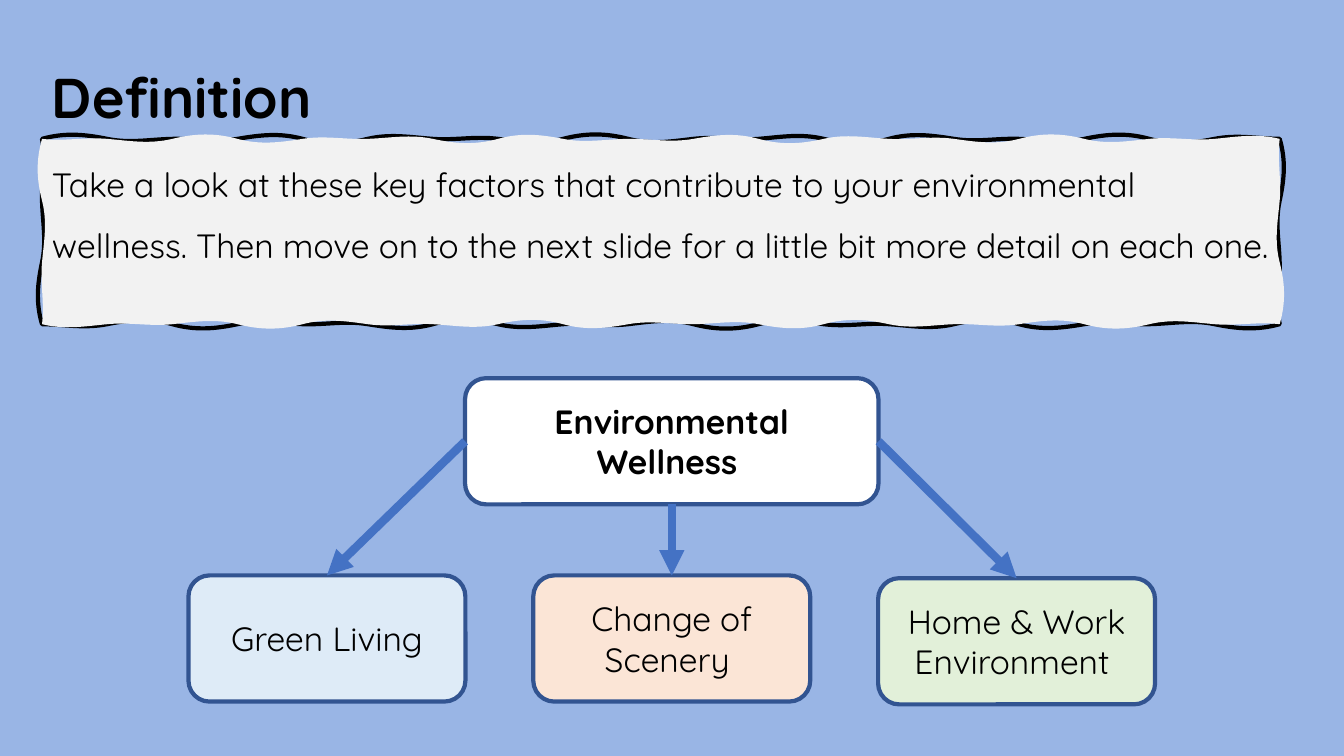
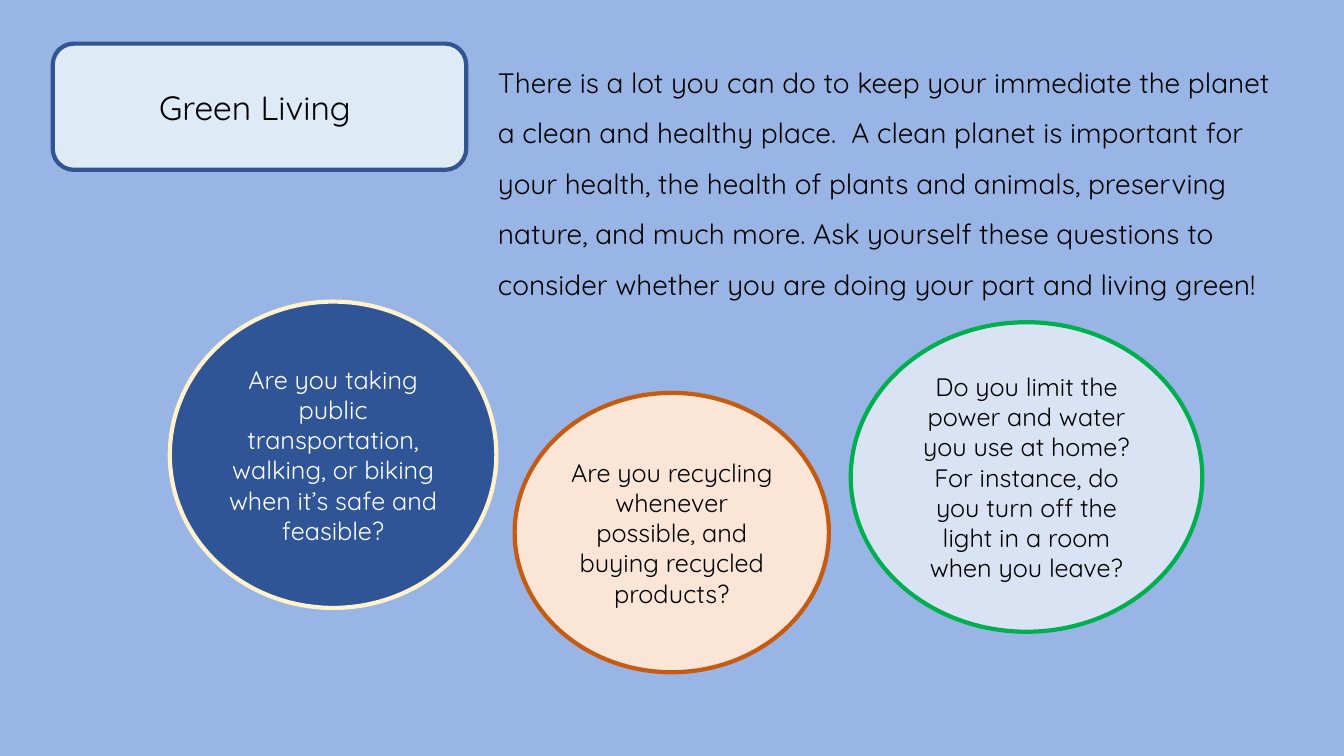
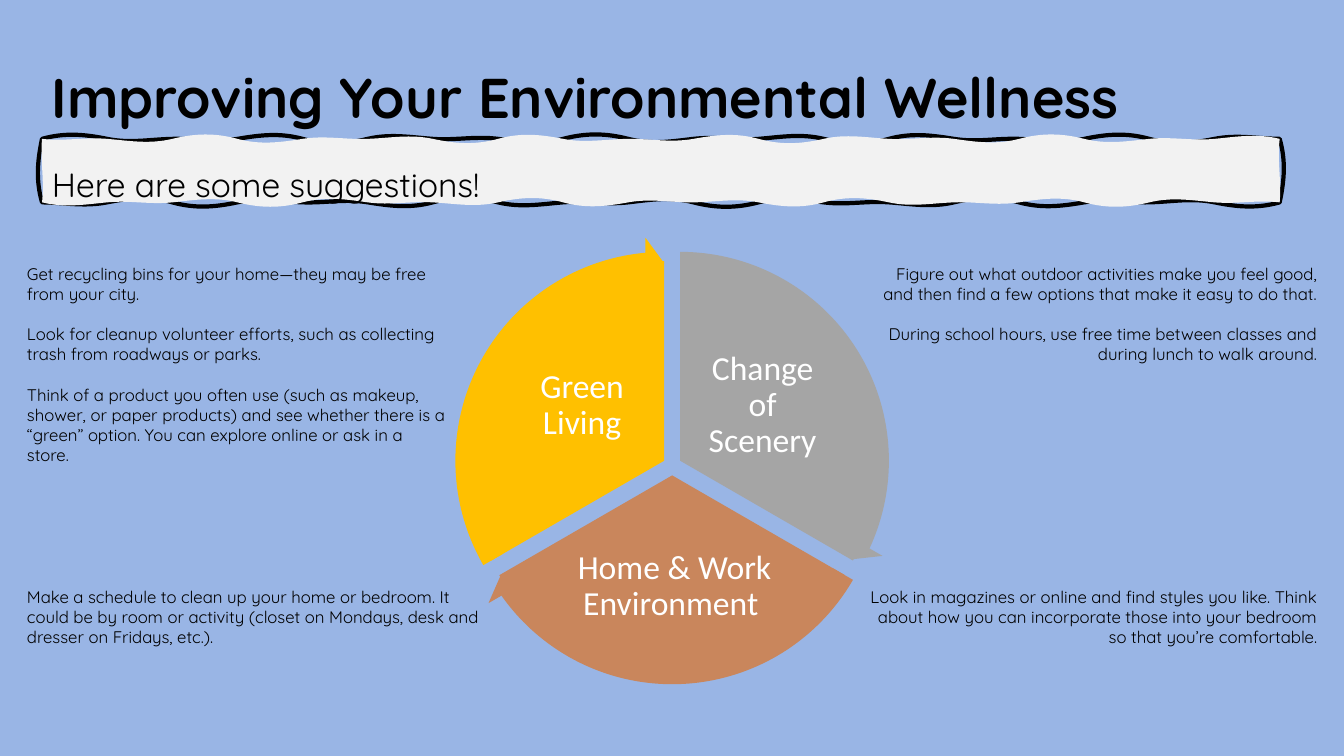
from collections import namedtuple
from dataclasses import dataclass
from math import cos

from lxml import etree
from pptx import Presentation
from pptx.dml.color import RGBColor
from pptx.enum.shapes import MSO_CONNECTOR, MSO_SHAPE
from pptx.enum.text import MSO_ANCHOR, PP_ALIGN
from pptx.oxml.ns import qn
from pptx.util import Cm, Pt

ROUNDED = MSO_SHAPE.ROUNDED_RECTANGLE
ELLIPSE = MSO_SHAPE.OVAL
PIE = MSO_SHAPE.PIE
CIRCULAR_ARROW = MSO_SHAPE.CIRCULAR_ARROW
STRAIGHT = MSO_CONNECTOR.STRAIGHT
LEFT, CENTER, RIGHT = PP_ALIGN.LEFT, PP_ALIGN.CENTER, PP_ALIGN.RIGHT
TOP, MIDDLE = MSO_ANCHOR.TOP, MSO_ANCHOR.MIDDLE
SITE_TOP, SITE_LEFT, SITE_BOTTOM, SITE_RIGHT = range(4)

Box = namedtuple("Box", "left top width height")
Insets = namedtuple("Insets", "left top right bottom")


@dataclass(frozen=True)
class Theme:
    """Colours, fonts and sizes shared by the slides."""

    font: str = "Quicksand"
    wheel_font: str = "Calibri"
    background: str = "99B5E5"
    text: str = "000000"
    white: str = "FFFFFF"
    paper: str = "F2F2F2"
    card_line: str = "325491"
    arrow: str = "4472C4"
    pale_blue: str = "DEEBF7"
    peach: str = "FBE5D6"
    pale_green: str = "E2F0D9"
    lavender: str = "DAE3F3"
    navy: str = "2F5597"
    cream: str = "FFF2CC"
    orange: str = "C55A11"
    green: str = "00B050"
    gold: str = "FFC000"
    grey: str = "A5A5A5"
    clay: str = "C9865C"
    title_size: float = 40
    lead_size: float = 24
    body_size: float = 20
    bubble_size: float = 18
    note_size: float = 12
    note_gap: float = 14.4
    outline: float = 3
    arrow_width: float = 6


THEME = Theme()
PLAIN_INSETS = Insets(0.25, 0.13, 0.25, 0.13)
CARD_INSETS = Insets(0.4, 0.13, 0.4, 0.13)
TIGHT_INSETS = Insets(0.08, 0.08, 0.08, 0.08)
CARD_WIDTH, CARD_HEIGHT = 10.42, 3.18
TITLE_BOX = Box(1.06, 1.45, 28.93, 1.96)


def lengths(box):
    """Turn a box in centimetres into lengths."""
    return [Cm(value) for value in box]


def write_text(shape, *texts, size, font=THEME.font, color=THEME.text, bold=False,
               align=LEFT, anchor=TOP, spacing=None, gap=0, insets=PLAIN_INSETS):
    """Write one paragraph for each text into a shape."""
    frame = shape.text_frame
    frame.word_wrap = True
    frame.vertical_anchor = anchor
    frame.margin_left, frame.margin_top, frame.margin_right, frame.margin_bottom = lengths(insets)
    for index, text in enumerate(texts):
        para = frame.add_paragraph() if index else frame.paragraphs[0]
        para.alignment = align
        para.space_before = Pt(gap if index else 0)
        if spacing:
            para.line_spacing = spacing
        span = para.add_run()
        span.text = text
        span.font.name = font
        span.font.size = Pt(size)
        span.font.bold = bold
        span.font.color.rgb = RGBColor.from_string(color)


def paint(shape, fill, line=None):
    """Give a shape its fill and outline, with no shadow."""
    shape.shadow.inherit = False
    shape.fill.solid()
    shape.fill.fore_color.rgb = RGBColor.from_string(fill)
    if line:
        shape.line.color.rgb = RGBColor.from_string(line)
        shape.line.width = Pt(THEME.outline)
    else:
        shape.line.fill.background()


def add_text(shapes, box, *texts, **style):
    """Add a text box."""
    write_text(shapes.add_textbox(*lengths(box)), *texts, **style)


def add_figure(shapes, kind, box, fill, line=None, adjustments=()):
    """Add a painted preset shape."""
    shape = shapes.add_shape(kind, *lengths(box))
    for index, value in enumerate(adjustments):
        shape.adjustments[index] = value
    paint(shape, fill, line)
    return shape


def add_card(page, box, text, fill, bold=False):
    """Add a rounded topic card."""
    card = add_figure(page.shapes, ROUNDED, box, fill, THEME.card_line)
    write_text(card, text, size=THEME.lead_size, bold=bold, align=CENTER,
               anchor=MIDDLE, insets=CARD_INSETS)
    return card


def add_bubble(page, box, text, fill, line, color=THEME.text):
    """Add an ellipse holding a question."""
    bubble = add_figure(page.shapes, ELLIPSE, box, fill, line)
    write_text(bubble, text, size=THEME.bubble_size, color=color, align=CENTER, anchor=MIDDLE)


def add_arrow(page, start, start_site, end, end_site):
    """Join two cards with an arrow."""
    arrow = page.shapes.add_connector(STRAIGHT, 0, 0, 0, 0)
    arrow.begin_connect(start, start_site)
    arrow.end_connect(end, end_site)
    arrow.line.color.rgb = RGBColor.from_string(THEME.arrow)
    arrow.line.width = Pt(THEME.arrow_width)
    etree.SubElement(arrow.line._get_or_add_ln(), qn("a:tailEnd"), type="triangle")
    etree.SubElement(arrow._element.spPr, qn("a:effectLst"))


def rough_curves(corners, phase):
    """List the Bezier curves that sway along the sides between corners."""
    curves = []
    for index, (x, y) in enumerate(corners):
        next_x, next_y = corners[(index + 1) % 4]
        length = abs(next_x - x) + abs(next_y - y)
        across, down = (next_x - x) / length, (next_y - y) / length
        count = max(1, round(length / 1.6))
        for step in range(count):
            curve = []
            for part, sway in ((0.35, -cos(phase + 2.4 * step)),
                               (0.65, cos(phase + 2.4 * (step + 1))), (1, 0)):
                along, shift = length * (step + part) / count, 0.16 * sway
                curve.append((x + across * along - down * shift,
                              y + down * along + across * shift))
            curves.append(curve)
    return curves


def roughen(band, corners):
    """Replace the straight path of a band by a swaying stroke and a swaying fill."""
    straight = next(band._element.iter(qn("a:path")))
    holder = straight.getparent()
    for phase, hidden in ((0, {"fill": "none"}), (2, {"stroke": "0"})):
        trace = etree.SubElement(holder, qn("a:path"), w=straight.get("w"),
                                 h=straight.get("h"), **hidden)
        steps = [("a:moveTo", corners[:1])]
        steps += [("a:cubicBezTo", curve) for curve in rough_curves(corners, phase)]
        steps.append(("a:close", []))
        for tag, points in steps:
            step = etree.SubElement(trace, qn(tag))
            for x, y in points:
                etree.SubElement(step, qn("a:pt"), x=str(Cm(x)), y=str(Cm(y)))
    holder.remove(straight)


def add_rough_band(page, height, text):
    """Add the torn paper band under the title with its text."""
    box = Box(1.06, 3.5, 31.19, height)
    corners = [(0, 0), (box.width, 0), (box.width, height), (0, height)]
    points = [(Cm(box.left + x), Cm(box.top + y)) for x, y in corners]
    builder = page.shapes.build_freeform(*points[0])
    builder.add_line_segments(points[1:], close=True)
    band = builder.convert_to_shape()
    roughen(band, corners)
    paint(band, THEME.paper, THEME.text)
    write_text(band, text, size=THEME.lead_size, spacing=1.5,
               insets=PLAIN_INSETS._replace(right=0.2))


def add_page(deck, title=None):
    """Add a blank slide with the shared background and title style."""
    page = deck.slides.add_slide(deck.slide_layouts[6])
    page.background.fill.solid()
    page.background.fill.fore_color.rgb = RGBColor.from_string(THEME.background)
    if title:
        add_text(page.shapes, TITLE_BOX, title, size=THEME.title_size, bold=True)
    return page


def add_wheel(page, center_x, center_y):
    """Add the three-part cycle around a centre."""
    shapes = page.shapes.add_group_shape().shapes
    pie_size, ring_size = 10.06, 11.28
    sectors = [
        (0.2, 0, THEME.grey, (162, 18), (14.73, 161.99)),
        (0, 0.37, THEME.clay, (18, 90), (86.72, 18.01)),
        (-0.2, 0, THEME.gold, (90, 162), (158.73, 90)),
    ]
    labels = [
        ("Change of Scenery", Box(0.49, -2.89, 3.58, 3)),
        ("Home & Work Environment ", Box(-2.63, 1.85, 5.38, 2.64)),
        ("Green Living", Box(-4.06, -2.89, 3.58, 3)),
    ]

    def square(shift_x, shift_y, size):
        """Centre a square on a shifted hub."""
        return Box(center_x + shift_x - size / 2, center_y + shift_y - size / 2, size, size)

    for shift_x, shift_y, fill, angles, _ in sectors:
        add_figure(shapes, PIE, square(shift_x, shift_y, pie_size), fill, adjustments=angles)
    for shift_x, shift_y, fill, _, (end, start) in sectors:
        add_figure(shapes, CIRCULAR_ARROW, square(shift_x, shift_y, ring_size), fill,
                   adjustments=(0.051, 3.275, end, start, 0.059))
    for text, box in labels:
        place = box._replace(left=center_x + box.left, top=center_y + box.top)
        add_text(shapes, place, text, size=THEME.lead_size, font=THEME.wheel_font,
                 color=THEME.white, align=CENTER, anchor=MIDDLE, spacing=0.9,
                 insets=TIGHT_INSETS)


def build_definition(deck):
    """Build the slide that names the three factors."""
    page = add_page(deck, "Definition")
    add_rough_band(page, 4.67, "Take a look at these key factors that contribute to your "
                   "environmental wellness. Then move on to the next slide for a little bit "
                   "more detail on each one.")
    root = add_card(page, Box(11.72, 9.53, CARD_WIDTH, CARD_HEIGHT),
                    "Environmental Wellness ", THEME.white, bold=True)
    factors = [
        ("Green Living", THEME.pale_blue, 14.5, SITE_LEFT),
        ("Change of Scenery ", THEME.peach, 14.5, SITE_BOTTOM),
        ("Home & Work Environment ", THEME.pale_green, 14.57, SITE_RIGHT),
    ]
    for index, (text, fill, top, site) in enumerate(factors):
        card = add_card(page, Box(4.75 + 8.69 * index, top, 6.98, CARD_HEIGHT), text, fill)
        add_arrow(page, root, site, card, SITE_TOP)


def build_green_living(deck):
    """Build the slide with questions about green living."""
    page = add_page(deck)
    add_card(page, Box(1.33, 1.1, CARD_WIDTH, CARD_HEIGHT), "Green Living ", THEME.pale_blue)
    add_text(page.shapes, Box(12.3, 1.1, 20.12, 7.8),
             "There is a lot you can do to keep your immediate the planet a clean and healthy "
             "place.  A clean planet is important for your health, the health of plants and "
             "animals, preserving nature, and much more. Ask yourself these questions to "
             "consider whether you are doing your part and living green!",
             size=THEME.body_size, spacing=1.5)
    add_bubble(page, Box(21.44, 8.12, 8.86, 7.8),
               "Do you limit the power and water you use at home? For instance, do you turn "
               "off the light in a room when you leave?", THEME.lavender, THEME.green)
    add_bubble(page, Box(4.28, 7.6, 8.23, 7.72),
               "Are you taking public transportation, walking, or biking when it’s safe and "
               "feasible?", THEME.navy, THEME.cream, THEME.white)
    add_bubble(page, Box(12.97, 9.9, 7.92, 7.04),
               "Are you recycling whenever possible, and buying recycled products?",
               THEME.peach, THEME.orange)


def build_suggestions(deck):
    """Build the slide with suggestions around the wheel."""
    page = add_page(deck, "Improving Your Environmental Wellness")
    add_wheel(page, 16.94, 11.61)
    left_edge, right_edge, upper, lower = 0.43, 33.45, 6.51, 14.65
    notes = [
        (LEFT, upper, 11.15, 5.38, (
            "Get recycling bins for your home—they may be free from your city.",
            "Look for cleanup volunteer efforts, such as collecting trash from roadways or parks.",
            "Think of a product you often use (such as makeup, shower, or paper products) and "
            "see whether there is a “green” option. You can explore online or ask in a store.")),
        (RIGHT, upper, 11.46, 3.33, (
            "Figure out what outdoor activities make you feel good, and then find a few options "
            "that make it easy to do that.",
            "During school hours, use free time between classes and during lunch to walk around.")),
        (LEFT, lower, 11.99, 1.8, (
            "Make a schedule to clean up your home or bedroom. It could be by room or activity "
            "(closet on Mondays, desk and dresser on Fridays, etc.).",)),
        (RIGHT, lower, 11.99, 1.8, (
            "Look in magazines or online and find styles you like. Think about how you can "
            "incorporate those into your bedroom so that you’re comfortable.",)),
    ]
    for align, top, width, height, texts in notes:
        left = left_edge if align == LEFT else right_edge - width
        add_text(page.shapes, Box(left, top, width, height), *texts,
                 size=THEME.note_size, align=align, gap=THEME.note_gap)
    add_rough_band(page, 1.6, "Here are some suggestions!")


def main():
    """Build and save the deck."""
    deck = Presentation()
    deck.slide_width, deck.slide_height = Cm(33.87), Cm(19.05)
    build_definition(deck)
    build_green_living(deck)
    build_suggestions(deck)
    deck.save("out.pptx")


if __name__ == "__main__":
    main()
